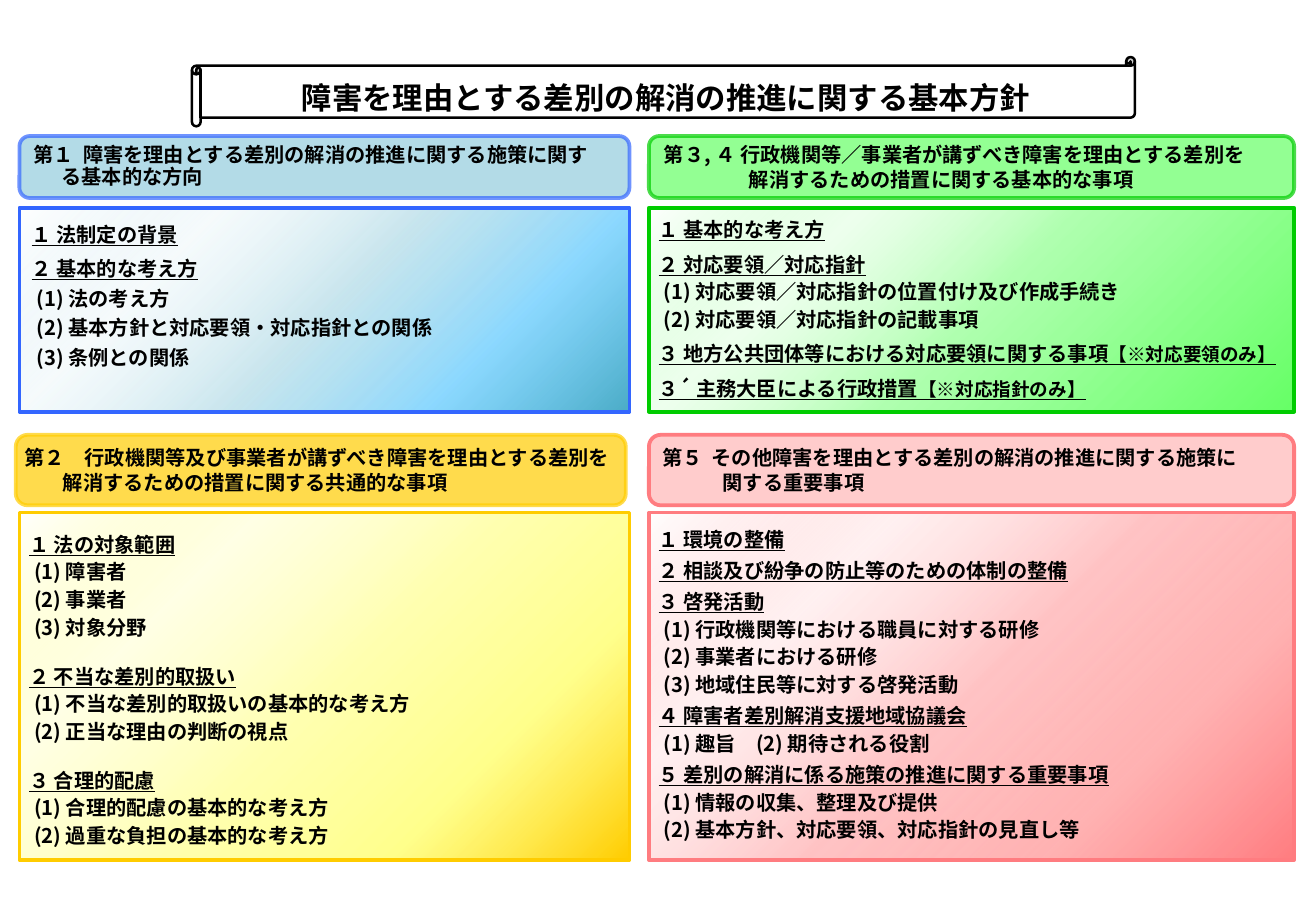
from dataclasses import dataclass

from lxml import etree
from pptx import Presentation, util as u
from pptx.dml.color import RGBColor
from pptx.enum import shapes, text
from pptx.oxml import ns

FONT = "Noto Sans CJK JP"

# Grid: (start, size) in inches
COLUMNS = [(0.16, 5.02), (5.34, 5.31)]
HEADING_ROWS = [(1.12, 0.51), (3.58, 0.58)]
LIST_ROWS = [(1.71, 1.68), (4.22, 2.86)]


@dataclass
class Section:
    column: int
    row: int
    heading: list      # two lines
    indents: tuple     # indent of each heading line
    heading_inset: float
    fill: str
    border: str
    opacity: int       # of the heading, in percent
    gradient: list     # five colours
    insets: tuple      # left and top of the list
    spacing: tuple     # points before topics and before items
    topics: list
    shift: float = 0
    leading: float = 1.0


SECTIONS = [
    Section(0, 0,
            ["第１  障害を理由とする差別の解消の推進に関する施策に関す", "る基本的な方向"],
            (0.05, 0.28), 0.04, "93CDDD", "3366FF", 70,
            ["FFFFFF", "DBEEF4", "93CDDD", "66CCFF", "4BACC6"], (0.1, 0.12), (6, 3),
            ["１ 法制定の背景", "２ 基本的な考え方", "(1) 法の考え方",
             "(2) 基本方針と対応要領・対応指針との関係", "(3) 条例との関係"],
            leading=u.Pt(13)),
    Section(0, 1,
            ["第２　行政機関等及び事業者が講ずべき障害を理由とする差別を",
             "解消するための措置に関する共通的な事項"],
            (0, 0.32), 0.04, "FFCC00", "FFCC00", 70,
            ["FFFFFF", "FFFF99", "FFFF66", "FFFF66", "FFCC00"], (0.08, 0.16), (14.5, 2),
            ["１ 法の対象範囲", "(1) 障害者", "(2) 事業者", "(3) 対象分野",
             "２ 不当な差別的取扱い", "(1) 不当な差別的取扱いの基本的な考え方",
             "(2) 正当な理由の判断の視点",
             "３ 合理的配慮", "(1) 合理的配慮の基本的な考え方",
             "(2) 過重な負担の基本的な考え方"],
            shift=-0.03),
    Section(1, 0,
            ["第３, ４ 行政機関等／事業者が講ずべき障害を理由とする差別を",
             "解消するための措置に関する基本的な事項"],
            (0, 0.7), 0.1, "66FF66", "00CC00", 70,
            ["FFFFFF", "BCFFBC", "66FF66", "66FF66", "66FF66"], (0.08, 0.08), (6, 2),
            ["１ 基本的な考え方", "２ 対応要領／対応指針",
             "(1) 対応要領／対応指針の位置付け及び作成手続き",
             "(2) 対応要領／対応指針の記載事項",
             "３ 地方公共団体等における対応要領に関する事項【※対応要領のみ】",
             "３´ 主務大臣による行政措置【※対応指針のみ】"]),
    Section(1, 1,
            ["第５  その他障害を理由とする差別の解消の推進に関する施策に", "関する重要事項"],
            (0, 0.5), 0.08, "FFCCCC", "FF7C80", 100,
            ["FFFFFF", "FFC8C9", "FF8B8D", "FF9999", "FF7C80"], (0.08, 0.12), (4, 2),
            ["１ 環境の整備", "２ 相談及び紛争の防止等のための体制の整備", "３ 啓発活動",
             "(1) 行政機関等における職員に対する研修", "(2) 事業者における研修",
             "(3) 地域住民等に対する啓発活動",
             "４ 障害者差別解消支援地域協議会", "(1) 趣旨　(2) 期待される役割",
             "５ 差別の解消に係る施策の推進に関する重要事項",
             "(1) 情報の収集、整理及び提供",
             "(2) 基本方針、対応要領、対応指針の見直し等"]),
]


def add_xml(parent, tag, **attributes):
    return etree.SubElement(parent, ns.qn(tag), attributes)


def paint(fill, color, opacity=100):
    fill.solid()
    fill.fore_color.rgb = RGBColor.from_string(color)
    if opacity < 100:
        for node in fill._xPr.iter(ns.qn("a:srgbClr")):
            add_xml(node, "a:alpha", val=str(opacity * 1000))


def outline(box, color, width, opacity=100):
    box.line.width = u.Pt(width)
    paint(box.line.fill, color, opacity)


def place(box, column, row):
    box.left, box.width = (u.Inches(v) for v in column)
    box.top, box.height = (u.Inches(v) for v in row)


def paint_gradient(box, colors):
    """Diagonal blend; the three inner stops are as opaque as their position."""
    gradient = add_xml(box._element.spPr, "a:gradFill", rotWithShape="1")
    stops = add_xml(gradient, "a:gsLst")
    for position, color in zip(range(0, 101, 25), colors):
        stop = add_xml(stops, "a:gs", pos=str(position * 1000))
        node = add_xml(stop, "a:srgbClr", val=color)
        if 0 < position < 100:
            add_xml(node, "a:alpha", val=str(position * 1000))
    add_xml(gradient, "a:lin", ang="2700000", scaled="0")


def prepare_frame(box, left, top, anchor):
    frame = box.text_frame
    frame.word_wrap = True
    frame.auto_size = text.MSO_AUTO_SIZE.NONE
    frame.vertical_anchor = anchor
    frame.margin_left = frame.margin_right = u.Inches(left)
    frame.margin_top = frame.margin_bottom = u.Inches(top)
    return frame


def add_para(frame, first, indent=0, before=0, leading=1.0, align=text.PP_ALIGN.LEFT):
    para = frame.paragraphs[0] if first else frame.add_paragraph()
    para.alignment = align
    para.line_spacing = leading
    para.space_before, para.space_after = u.Pt(before), u.Pt(0)
    properties = para._p.get_or_add_pPr()
    properties.set("marL", str(u.Inches(indent)))
    properties.set("indent", "0")
    add_xml(properties, "a:buNone")
    return para


def add_span(para, words, size=12, underline=False):
    span = para.add_run()
    span.text = words
    font = span.font
    font.name, font.size, font.bold, font.underline = FONT, u.Pt(size), True, underline
    paint(font.fill, "000000")
    add_xml(span._r.get_or_add_rPr(), "a:ea", typeface=FONT)


def add_title(page, words):
    scroll = page.shapes.add_shape(shapes.MSO_SHAPE.HORIZONTAL_SCROLL, 0, 0, 0, 0)
    scroll.shadow.inherit = False
    place(scroll, (1.58, 7.76), (0.47, 0.57))
    paint(scroll.fill, "FFFFFF")
    outline(scroll, "000000", 1.5)
    # Bring the title in front of its scroll
    title = page.shapes.title
    scroll._element.addnext(title._element)
    place(title, (1.8, 7.36), (0.6, 0.4))
    frame = prepare_frame(title, 0.1, 0, text.MSO_ANCHOR.MIDDLE)
    add_span(add_para(frame, True, align=text.PP_ALIGN.CENTER), words, 18)


def add_heading(page, section):
    box = page.shapes.add_shape(shapes.MSO_SHAPE.ROUNDED_RECTANGLE, 0, 0, 0, 0)
    box.shadow.inherit = False
    left, width = COLUMNS[section.column]
    place(box, (left + section.shift, width), HEADING_ROWS[section.row])
    paint(box.fill, section.fill, section.opacity)
    outline(box, section.border, 2.25, section.opacity)
    frame = prepare_frame(box, section.heading_inset, 0, text.MSO_ANCHOR.MIDDLE)
    for number, (line, indent) in enumerate(zip(section.heading, section.indents)):
        add_span(add_para(frame, number == 0, indent, leading=section.leading), line)


def fill_list(body, section):
    place(body, COLUMNS[section.column], LIST_ROWS[section.row])
    paint_gradient(body, section.gradient)
    outline(body, section.border, 2.25)
    frame = prepare_frame(body, *section.insets, text.MSO_ANCHOR.TOP)
    for number, line in enumerate(section.topics):
        is_item = line.startswith("(")
        para = add_para(frame, number == 0, 0.04 * is_item, section.spacing[is_item])
        topic, bracket, note = line.partition("【")
        add_span(para, topic, underline=not is_item)
        if note:
            add_span(para, bracket + note, 11, underline=True)


def main():
    deck = Presentation()
    deck.slide_width, deck.slide_height = u.Inches(10.83), u.Inches(7.5)
    # The comparison layout offers one title and four bodies
    page = deck.slides.add_slide(deck.slide_layouts[4])
    bodies = list(page.placeholders)[1:]
    add_title(page, "障害を理由とする差別の解消の推進に関する基本方針")
    for section, body in zip(SECTIONS, bodies):
        add_heading(page, section)
        fill_list(body, section)
    deck.save("out.pptx")


if __name__ == "__main__":
    main()
